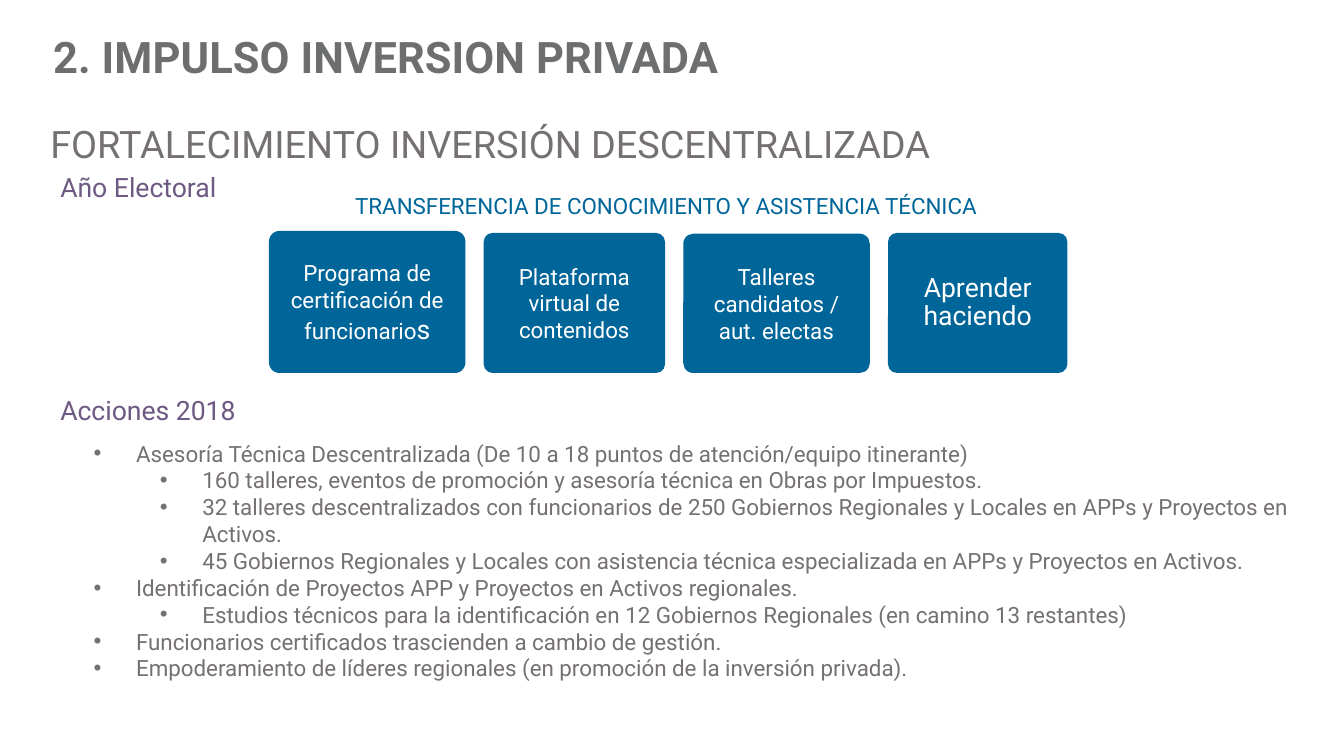
import pptx
import pptx.util
import pptx.oxml.ns
import pptx.dml.color
import pptx.enum.shapes
import pptx.enum.text
import lxml.etree
from pptx.util import Cm, Pt

ALIGN = pptx.enum.text.PP_ALIGN
ANCHOR = pptx.enum.text.MSO_ANCHOR
FONT = "Roboto"
GREY, BLUE, PURPLE, WHITE = "767171", "006699", "6D5981", "FFFFFF"

# Content
TITLE = "2. IMPULSO INVERSION PRIVADA"
# text, left, top, width, height (cm), size, colour, alignment
LABELS = [
    ("FORTALECIMIENTO INVERSIÓN DESCENTRALIZADA", 0.94, 2.87, 28.27, 1.5, 27, GREY, ALIGN.LEFT),
    ("TRANSFERENCIA DE CONOCIMIENTO Y ASISTENCIA TÉCNICA", 6.12, 4.67, 21.34, 1.02, 16, BLUE, ALIGN.CENTER),
    ("Año Electoral", 1.19, 4.14, 12.62, 1.14, 19, PURPLE, ALIGN.LEFT),
    ("Acciones 2018", 1.19, 9.75, 21.31, 1.14, 19, PURPLE, ALIGN.LEFT),
]
# runs (text, size), width, height (cm), corner, line spacing
CARDS = [
    ([("Programa de certificación de funcionario", 16), ("s", 19)], 4.95, 3.58, 0.074, 1.0),
    ([("Plataforma virtual de contenidos", 16)], 4.57, 3.53, 0.064, 1.0),
    ([("Talleres candidatos / aut. electas", 16)], 4.7, 3.51, 0.072, 1.0),
    ([("Aprender haciendo", 19)], 4.52, 3.53, 0.064, 0.9),
]
CARD_LEFT, CARD_BOTTOM, CARD_GAP = 6.78, 9.4, 0.46
# level, text
ACTIONS = [
    (0, "Asesoría Técnica Descentralizada (De 10 a 18 puntos de atención/equipo itinerante)"),
    (1, "160 talleres, eventos de promoción y asesoría técnica en Obras por Impuestos."),
    (1, "32 talleres descentralizados con funcionarios de 250 Gobiernos Regionales y Locales"
        " en APPs y Proyectos en Activos."),
    (1, "45 Gobiernos Regionales y Locales con asistencia técnica especializada en APPs y"
        " Proyectos en Activos."),
    (0, "Identificación de Proyectos APP y Proyectos en Activos regionales."),
    (1, "Estudios técnicos para la identificación en 12 Gobiernos Regionales (en camino 13 restantes)"),
    (0, "Funcionarios certificados trascienden a cambio de gestión."),
    (0, "Empoderamiento de líderes regionales (en promoción de la inversión privada)."),
]
INDENTS, HANGING = (1.07, 2.74), 1.07


def rgb(colour):
    return pptx.dml.color.RGBColor.from_string(colour)


def add_run(p, text, size, colour, bold=False):
    r = p.add_run()
    r.text = text
    r.font.name, r.font.size, r.font.bold = FONT, Pt(size), bold
    r.font.color.rgb = rgb(colour)
    return r


def set_frame(tf, margins=(0.33, 0.18, 0.18)):
    side, above, below = margins
    tf.word_wrap = True
    tf.margin_left = tf.margin_right = Cm(side)
    tf.margin_top, tf.margin_bottom = Cm(above), Cm(below)


def add_text_box(s, left, top, width, height):
    tf = s.shapes.add_textbox(Cm(left), Cm(top), Cm(width), Cm(height)).text_frame
    set_frame(tf)
    tf.auto_size = pptx.enum.text.MSO_AUTO_SIZE.SHAPE_TO_FIT_TEXT
    return tf


def add_bullet(p, level):
    p.level = level
    pPr = p._p.get_or_add_pPr()
    pPr.set("marL", str(Cm(INDENTS[level])))
    pPr.set("indent", str(-Cm(HANGING)))
    qn = pptx.oxml.ns.qn
    lxml.etree.SubElement(pPr, qn("a:buFont")).set("typeface", "Arial")
    lxml.etree.SubElement(pPr, qn("a:buChar")).set("char", "•")


prs = pptx.Presentation()
prs.slide_width, prs.slide_height = Cm(33.87), Cm(19.05)
s = prs.slides.add_slide(prs.slide_layouts[6])

# Title
tf = add_text_box(s, 1.29, 0.97, 18.65, 1.12)
set_frame(tf, (0.05, 0.03, 0))
p = tf.paragraphs[0]
p.line_spacing = Pt(30.4)
r = add_run(p, TITLE, 31, "6D6E70", bold=True)
r._r.get_or_add_rPr().set("spc", "10")

# Headings
for text, left, top, width, height, size, colour, align in LABELS:
    p = add_text_box(s, left, top, width, height).paragraphs[0]
    p.alignment = align
    add_run(p, text, size, colour)

# Row of cards, standing on one base line
left = CARD_LEFT
for runs, width, height, corner, spacing in CARDS:
    sp = s.shapes.add_shape(pptx.enum.shapes.MSO_SHAPE.ROUNDED_RECTANGLE,
                            Cm(left), Cm(CARD_BOTTOM - height), Cm(width), Cm(height))
    sp.adjustments[0] = corner
    sp.shadow.inherit = False
    sp.fill.solid()
    sp.fill.fore_color.rgb = rgb(BLUE)
    sp.line.fill.background()
    tf = sp.text_frame
    set_frame(tf)
    tf.vertical_anchor = ANCHOR.MIDDLE
    p = tf.paragraphs[0]
    p.alignment = ALIGN.CENTER
    p.line_spacing = spacing
    for text, size in runs:
        add_run(p, text, size, WHITE)
    left += width + CARD_GAP

# Actions list
tf = add_text_box(s, 2.03, 10.9, 31.55, 7.19)
for i, (level, text) in enumerate(ACTIONS):
    p = tf.add_paragraph() if i else tf.paragraphs[0]
    add_bullet(p, level)
    p.alignment = ALIGN.LEFT if level else ALIGN.JUSTIFY
    add_run(p, text, 16, GREY)

prs.save("out.pptx")
